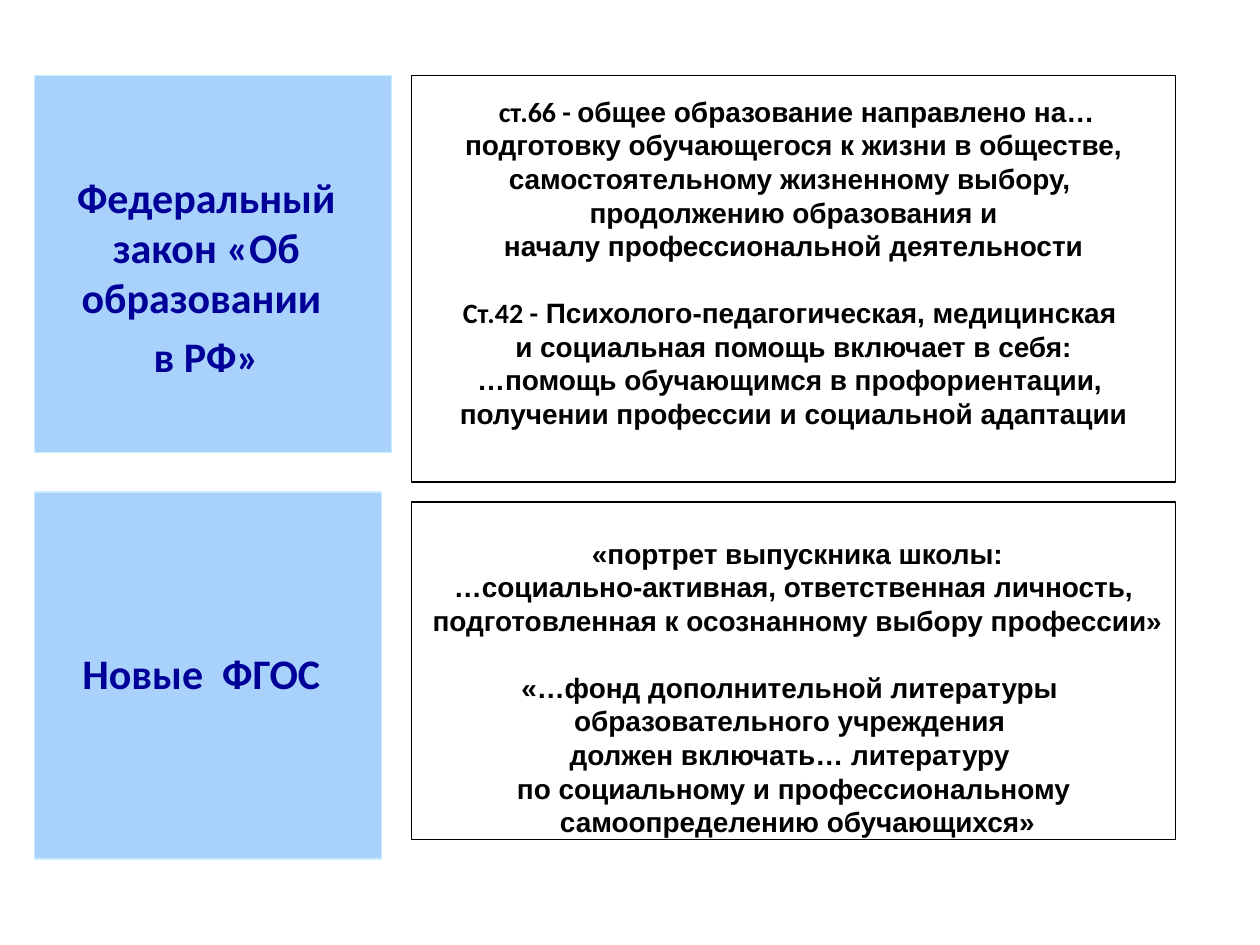
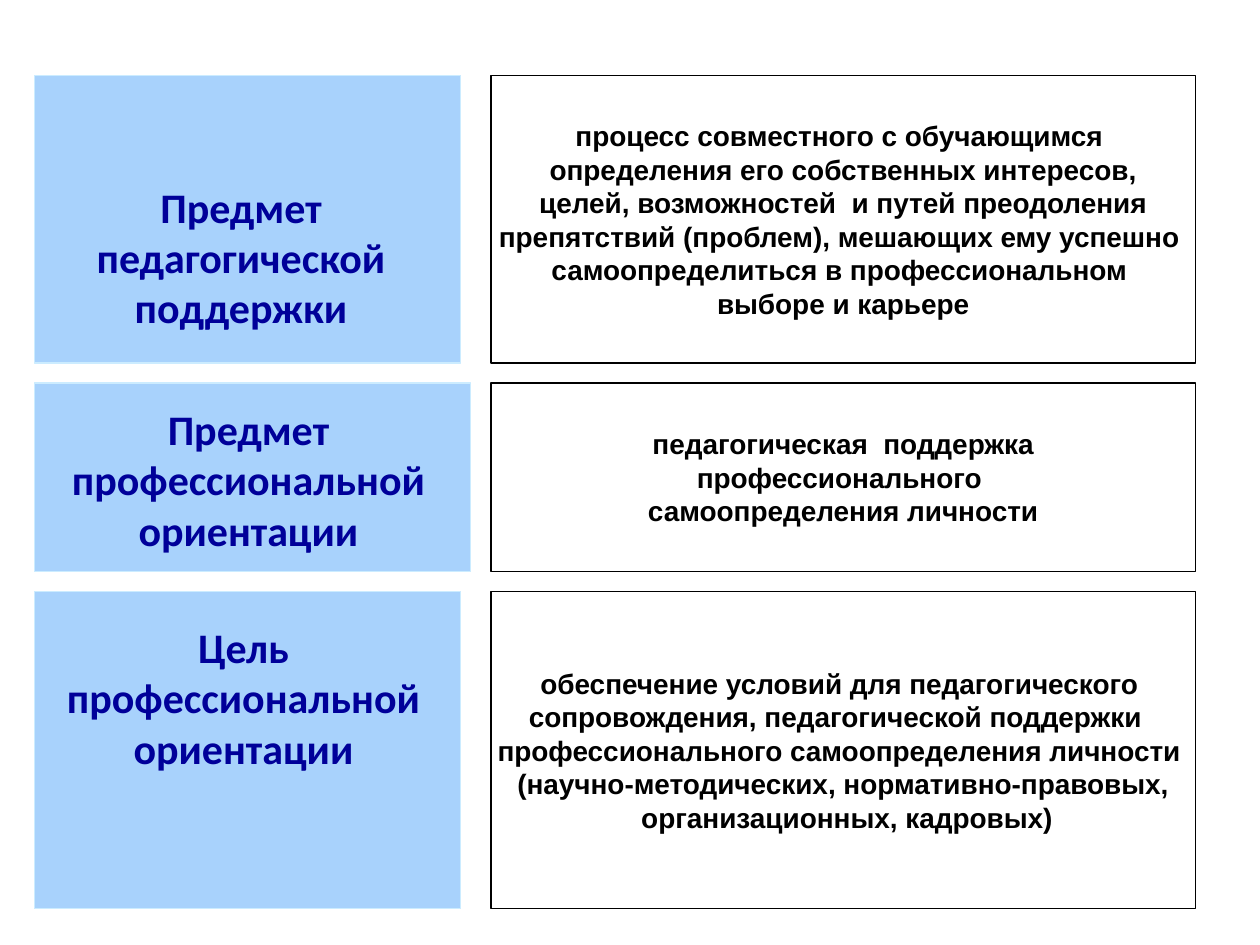
from dataclasses import dataclass

from pptx import Presentation
from pptx.dml.color import RGBColor
from pptx.enum import shapes, text
from pptx.util import Cm, Pt


# Content: label text, then the lines of the statement beside it;
# a tuple is a line that opens in the label font, "gap" starts a new passage
LAW_LINES = [
    (" ст.66 - ", "общее образование направлено на…"),
    "подготовку обучающегося к жизни в обществе,",
    "самостоятельному жизненному выбору, ",
    "продолжению образования и",
    "началу профессиональной деятельности",
    "gap",
    ("Ст.42 -", " Психолого-педагогическая, медицинская "),
    "и социальная помощь включает в себя:",
    "…помощь обучающимся в профориентации, ",
    "получении профессии и социальной адаптации",
]
STANDARD_LINES = [
    " «портрет выпускника школы:",
    "…социально-активная, ответственная личность,",
    " подготовленная к осознанному выбору профессии»",
    "gap",
    "«…фонд дополнительной литературы ",
    "образовательного учреждения ",
    "должен включать… литературу ",
    "по социальному и профессиональному",
    " самоопределению обучающихся»",
]
SUPPORT_LINES = [
    "процесс совместного с обучающимся ",
    "определения его собственных интересов,",
    " целей, возможностей  и путей преодоления ",
    "препятствий (проблем), мешающих ему успешно ",
    "самоопределиться в профессиональном ",
    "выборе и карьере",
]
GUIDANCE_LINES = [
    " педагогическая  поддержка ",
    "профессионального ",
    "самоопределения личности",
]
GOAL_LINES = [
    "обеспечение условий для педагогического ",
    "сопровождения, педагогической поддержки  ",
    "профессионального самоопределения личности ",
    "(научно-методических, нормативно-правовых,",
    " организационных, кадровых)",
]

# Sizes in cm. card: width, height; label: x and y inside the card, height,
# and the number of lines it is lowered by; pad: lines kept free (top, bottom)
PAGES = [
    dict(left=8.3, width=15.4, card_gap=0.8, rows=[
        dict(label=["Федеральный закон «Об образовании ", "в РФ»"],
             card=(7.2, 7.6), place=(0.2, 0.56, 5.8), lowered=1,
             lines=LAW_LINES, height=8.2, pad=(0, 1)),
        dict(label=["Новые  ФГОС"],
             card=(7.0, 7.4), place=(0.2, 0.53, 3.7), lowered=2,
             lines=STANDARD_LINES, height=6.8, pad=(1, 0)),
    ]),
    dict(left=9.9, width=14.2, card_gap=0.4, rows=[
        dict(label=["Предмет педагогической поддержки"],
             card=(8.6, 5.8), place=(0.2, 0.76, 3.5), lowered=1,
             lines=SUPPORT_LINES, height=5.8, pad=(0, 0)),
        dict(label=["Предмет профессиональной ориентации"],
             card=(8.8, 3.8), place=(0.25, 0.28, 1.7), lowered=0,
             lines=GUIDANCE_LINES, height=3.8, pad=(0, 0)),
        dict(label=["Цель профессиональной ориентации"],
             card=(8.6, 6.4), place=(0.25, 0.48, 3.3), lowered=0,
             lines=GOAL_LINES, height=6.4, pad=(0, 0)),
    ]),
]


@dataclass(frozen=True)
class Theme:
    card_fill = RGBColor.from_string("A8D2FC")
    card_line = RGBColor.from_string("CCECFF")
    label_color = RGBColor.from_string("000099")
    ink = RGBColor.from_string("000000")
    label_font = "Calibri"
    body_font = "Arial"
    label_size = Pt(24)
    body_size = Pt(16)
    line_width = Pt(0.75)
    label_spacing = Pt(4.8)
    label_line = Cm(1.24)
    body_line = Pt(19)
    inset = Cm(0.13)


THEME = Theme()
CARD_LEFT, TOP, STATEMENT_GAP = 0.69, 1.52, 0.4
LABEL_NARROWER = 0.66


# Shared parts
def style_span(span, font, size, color):
    span.font.name, span.font.size = font, size
    span.font.color.rgb = color
    span.font.bold = True


def add_box(parent, left, top, width, height, line, fill=None):
    box = parent.add_shape(shapes.MSO_SHAPE.RECTANGLE,
                           Cm(left), Cm(top), Cm(width), Cm(height))
    box.shadow.inherit = False
    if fill is None:
        box.fill.background()
    else:
        box.fill.solid()
        box.fill.fore_color.rgb = fill
    box.line.color.rgb = line
    box.line.width = THEME.line_width
    return box


def add_label(page, row, top):
    width, height = row["card"]
    dx, dy, label_height = row["place"]
    group = page.shapes.add_group_shape()
    add_box(group.shapes, CARD_LEFT, top, width, height,
            THEME.card_line, THEME.card_fill)
    box = group.shapes.add_textbox(Cm(CARD_LEFT + dx), Cm(top + dy),
                                   Cm(width - LABEL_NARROWER), Cm(label_height))
    frame = box.text_frame
    frame.word_wrap = True
    frame.margin_top = THEME.inset + row["lowered"] * THEME.label_line
    frame.text = "\n".join(row["label"])
    for number, para in enumerate(frame.paragraphs):
        para.alignment = text.PP_ALIGN.CENTER
        if number:
            para.space_before = THEME.label_spacing
        for span in para.runs:
            style_span(span, THEME.label_font, THEME.label_size, THEME.label_color)


def add_statement(page, row, left, top, width):
    box = add_box(page.shapes, left, top, width, row["height"], THEME.ink)
    frame = box.text_frame
    frame.word_wrap = False
    frame.vertical_anchor = text.MSO_ANCHOR.MIDDLE
    above, below = row["pad"]
    frame.margin_top = THEME.inset + above * THEME.body_line
    frame.margin_bottom = THEME.inset + below * THEME.body_line

    para, after_gap = frame.paragraphs[0], False
    for number, line in enumerate(row["lines"]):
        if line == "gap":
            after_gap = True
            continue
        if number:
            para = frame.add_paragraph()
        para.alignment = text.PP_ALIGN.CENTER
        if after_gap:
            para.space_before, after_gap = THEME.body_line, False
        parts = line if isinstance(line, tuple) else (line,)
        fonts = (THEME.label_font, THEME.body_font)[-len(parts):]
        for part, font in zip(parts, fonts):
            span = para.add_run()
            span.text = part
            style_span(span, font, THEME.body_size, THEME.ink)


# Pages: two columns, each stacked downwards with its own gap
def main():
    deck = Presentation()
    deck.slide_width, deck.slide_height = Cm(25.4), Cm(19.05)
    blank = deck.slide_layouts[6]
    for content in PAGES:
        page = deck.slides.add_slide(blank)
        card_top = statement_top = TOP
        for row in content["rows"]:
            add_label(page, row, card_top)
            add_statement(page, row, content["left"], statement_top, content["width"])
            card_top += row["card"][1] + content["card_gap"]
            statement_top += row["height"] + STATEMENT_GAP
    deck.save("out.pptx")


if __name__ == "__main__":
    main()
